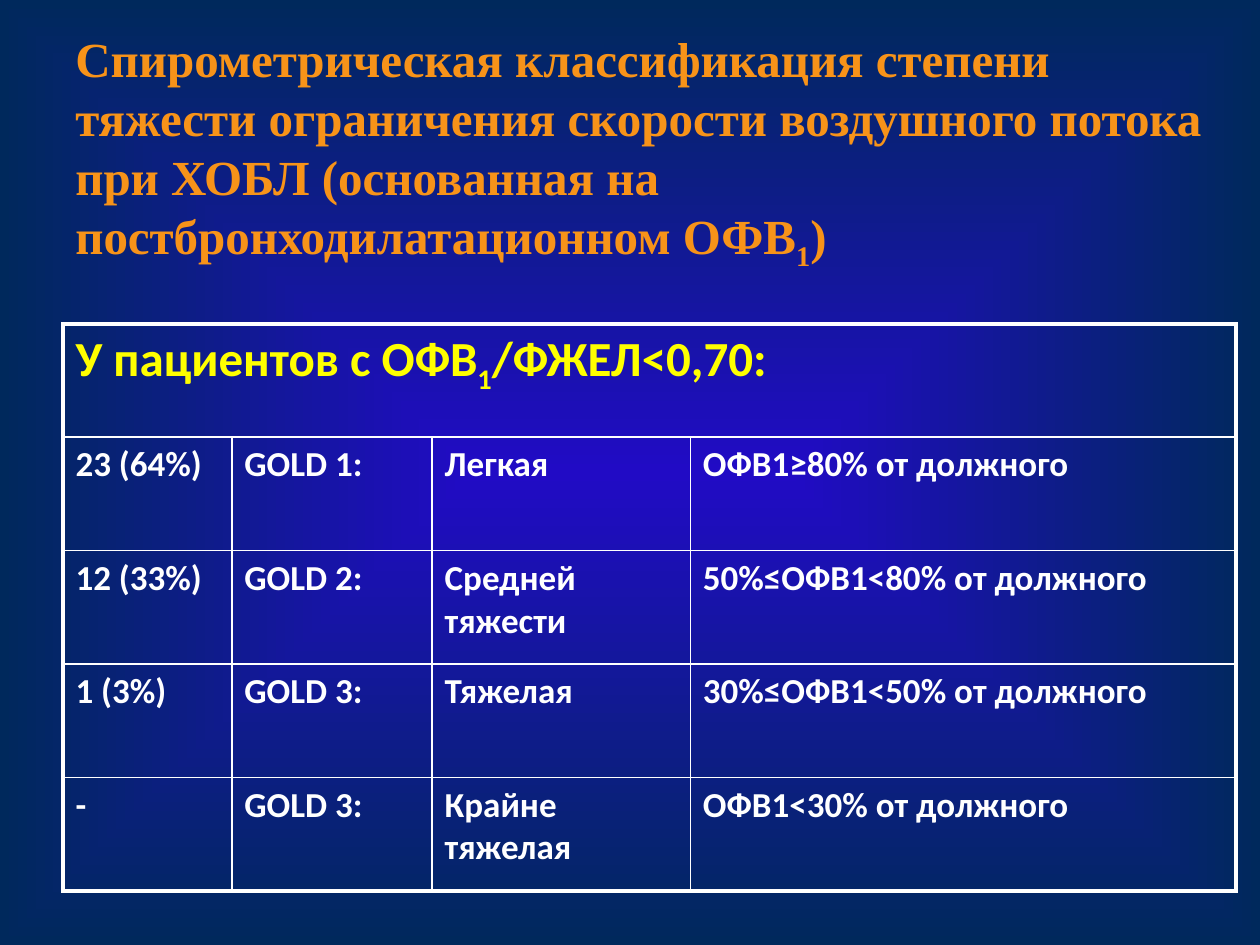
from lxml.etree import SubElement
from pptx import Presentation
from pptx.dml.color import RGBColor
from pptx.enum.text import MSO_ANCHOR
from pptx.oxml import parse_xml
from pptx.oxml.ns import nsdecls, qn
from pptx.util import Inches, Pt

WHITE, YELLOW, ORANGE = "FFFFFF", "FFFF00", "F79319"
OUTER, INNER = 2.25, 1
COLUMN_WIDTHS = [1.34, 1.59, 2.05, 4.33]
ROW_HEIGHT = 0.9

# Runs are pairs of wording and whether it is a subscript
TITLE = [
    ("Спирометрическая классификация степени тяжести ограничения скорости "
     "воздушного потока при ХОБЛ (основанная на постбронходилатационном ОФВ", False),
    ("1", True),
    (")", False),
]
TABLE_HEADING = [("У пациентов с ОФВ", False), ("1", True), ("/ФЖЕЛ<0,70:", False)]
GRADES = [
    ("23 (64%)", "GOLD 1:", "Легкая", "ОФВ1≥80% от должного"),
    ("12 (33%)", "GOLD 2:", "Средней тяжести", "50%≤ОФВ1<80% от должного"),
    ("1 (3%)", "GOLD 3:", "Тяжелая", "30%≤ОФВ1<50% от должного"),
    ("-", "GOLD 3:", "Крайне тяжелая", "ОФВ1<30% от должного"),
]


def color(hex_code):
    return RGBColor.from_string(hex_code)


class SlideBuilder:
    def __init__(self, slide):
        self.slide = slide

    def background(self, center, edge):
        fill = self.slide.background.fill
        fill.gradient()
        for stop, hex_code, position in zip(fill.gradient_stops, (center, edge), (0, 1)):
            stop.color.rgb = color(hex_code)
            stop.position = position
        # Spread the gradient from the middle instead of along a line
        gradient = self.slide.element.find(".//" + qn("a:gradFill"))
        gradient.remove(gradient.find(qn("a:lin")))
        spread = SubElement(gradient, qn("a:path"), {"path": "shape"})
        SubElement(spread, qn("a:fillToRect"), dict.fromkeys("ltrb", "50000"))

    def add_runs(self, para, runs, size, hex_code, font):
        for wording, subscript in runs:
            span = para.add_run()
            span.text = wording
            span.font.size = Pt(size)
            span.font.bold = True
            span.font.name = font
            span.font.color.rgb = color(hex_code)
            if subscript:
                span.font._element.set("baseline", "-25000")

    def text(self, left, top, width, height, runs, size, hex_code, font):
        box = self.slide.shapes.add_textbox(
            Inches(left), Inches(top), Inches(width), Inches(height))
        frame = box.text_frame
        frame.word_wrap = True
        frame.vertical_anchor = MSO_ANCHOR.MIDDLE
        self.add_runs(frame.paragraphs[0], runs, size, hex_code, font)

    def table(self, left, top, widths, row_height, row_count):
        frame = self.slide.shapes.add_table(
            row_count, len(widths), Inches(left), Inches(top),
            Inches(sum(widths)), Inches(row_height * row_count))
        table = frame.table
        table.first_row = table.horz_banding = False
        for column, width in zip(table.columns, widths):
            column.width = Inches(width)
        for row in table.rows:
            row.height = Inches(row_height)
        return table

    def cell(self, cell, runs, size, hex_code, borders):
        cell.fill.background()
        para = cell.text_frame.paragraphs[0]
        para.space_before = Pt(size * 0.2)
        self.add_runs(para, runs, size, hex_code, "Calibri")
        # Borders stand before the fill, in the order left, right, top, bottom
        properties = cell._tc.get_or_add_tcPr()
        for index, (side, width) in enumerate(zip("LRTB", borders)):
            properties.insert(index, parse_xml(
                f'<a:ln{side} {nsdecls("a")} w="{Pt(width)}"><a:solidFill>'
                f'<a:srgbClr val="{WHITE}"/></a:solidFill></a:ln{side}>'))


def main():
    deck = Presentation()
    deck.slide_width, deck.slide_height = Inches(10), Inches(7.5)
    page = SlideBuilder(deck.slides.add_slide(deck.slide_layouts[6]))

    # Background and title
    page.background("210BC5", "00295C")
    page.text(0.5, 0.3, 9.23, 1.79, TITLE, 28, ORANGE, "Times New Roman")

    # Table with a heading across all columns
    table = page.table(0.5, 2.57, COLUMN_WIDTHS, ROW_HEIGHT, len(GRADES) + 1)
    last_column = len(COLUMN_WIDTHS) - 1
    table.cell(0, 0).merge(table.cell(0, last_column))
    page.cell(table.cell(0, 0), TABLE_HEADING, 28, YELLOW, (OUTER, OUTER, OUTER, INNER))

    # One row for each grade
    for row, grade in enumerate(GRADES, start=1):
        for column, wording in enumerate(grade):
            borders = (
                OUTER if column == 0 else INNER,
                OUTER if column == last_column else INNER,
                INNER,
                OUTER if row == len(GRADES) else INNER,
            )
            page.cell(table.cell(row, column), [(wording, False)], 20, WHITE, borders)

    deck.save("out.pptx")


if __name__ == "__main__":
    main()
